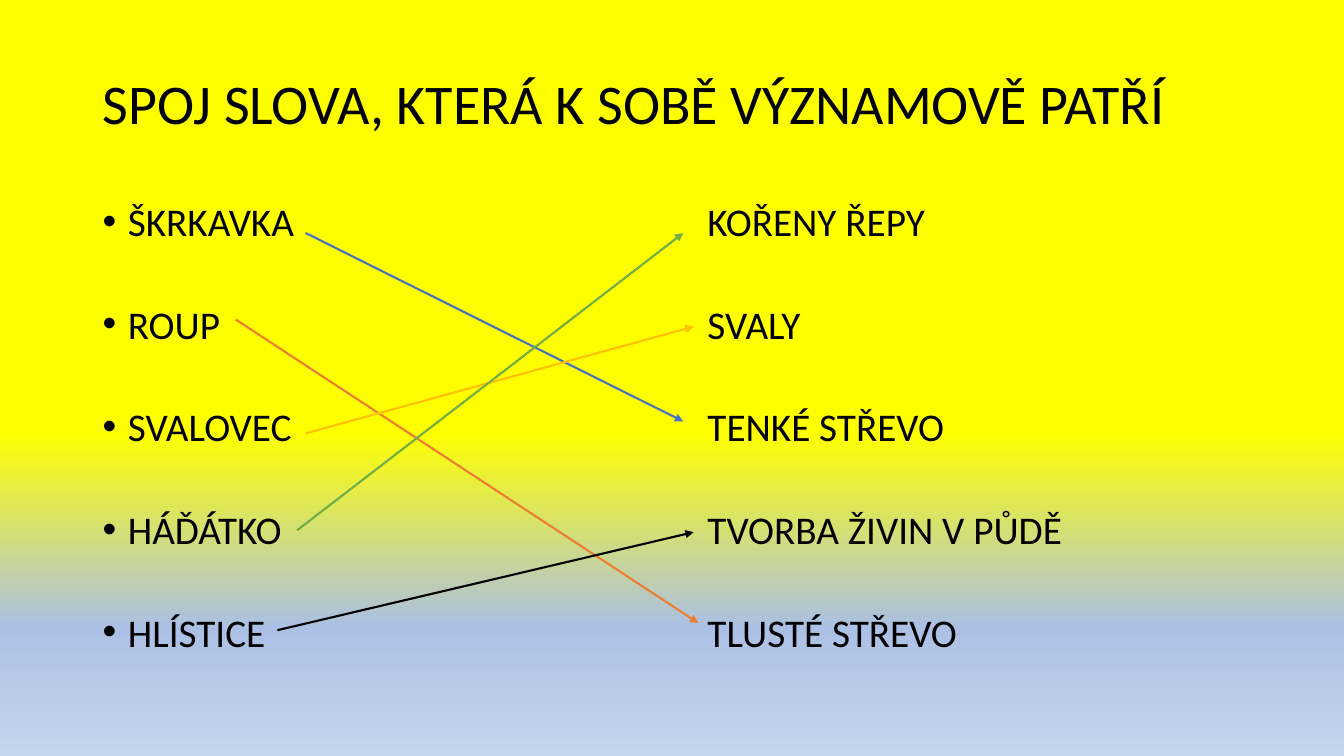
import pptx
import pptx.util
import pptx.dml.color
import pptx.enum.shapes
import pptx.enum.text
import pptx.oxml
import pptx.oxml.ns

Cm, Pt = pptx.util.Cm, pptx.util.Pt

TITLE = "SPOJ SLOVA, KTERÁ K SOBĚ VÝZNAMOVĚ PATŘÍ"
WORMS = ["ŠKRKAVKA", "ROUP", "SVALOVEC", "HÁĎÁTKO", "HLÍSTICE"]
PLACES = ["KOŘENY ŘEPY", "SVALY", "TENKÉ STŘEVO", "TVORBA ŽIVIN V PŮDĚ", "TLUSTÉ STŘEVO"]
ARROWS = [
    ((7.7, 5.87), (17.22, 10.62), "4472C4"),
    ((5.94, 8.05), (17.6, 15.7), "ED7D31"),
    ((7.7, 10.92), (17.48, 8.23), "FFC000"),
    ((7.49, 13.36), (17.22, 5.87), "70AD47"),
    ((6.99, 15.88), (17.48, 13.41), "000000"),
]
GRADIENT = [(57, "FFFF00"), (83, "ABC0E4"), (92, "BACBE9"), (100, "C7D5ED")]
LEFT, RIGHT, SPLIT = 2.34, 31.55, 17.58
BODY_TOP, BODY_HEIGHT = 5.08, 12.09
TITLE_FORMAT = {"line_spacing": 0.9}
ROW_FORMAT = {"line_spacing": 0.8, "space_before": Pt(0), "space_after": Pt(46.4)}


def rgb(value):
    return pptx.dml.color.RGBColor.from_string(value)


def element(tag, **attrs):
    el = pptx.oxml.parse_xml(f"<a:{tag} {pptx.oxml.ns.nsdecls('a')}/>")
    for name, value in attrs.items():
        el.set(name, str(value))
    return el


def add_text(s, box, lines, size, para_format, anchor, bullet=False):
    tf = s.shapes.add_textbox(*map(Cm, box)).text_frame
    tf.word_wrap = True
    tf.vertical_anchor = anchor
    for i, line in enumerate(lines):
        p = tf.paragraphs[0] if i == 0 else tf.add_paragraph()
        for name, value in para_format.items():
            setattr(p, name, value)
        if bullet:
            pPr = p._p.get_or_add_pPr()
            pPr.set("marL", str(Cm(0.635)))
            pPr.set("indent", str(-Cm(0.635)))
            pPr.append(element("buFont", typeface="Arial"))
            pPr.append(element("buChar", char="•"))
        r = p.add_run()
        r.text = line
        for name, value in {"name": "Calibri", "size": Pt(size)}.items():
            setattr(r.font, name, value)
        r.font.color.rgb = rgb("000000")


def add_arrow(s, start, end, color):
    sp = s.shapes.add_connector(
        pptx.enum.shapes.MSO_CONNECTOR.STRAIGHT, *map(Cm, start + end))
    sp.line.color.rgb = rgb(color)
    sp.line.width = Pt(1.5)
    sp.line._get_or_add_ln().append(element("tailEnd", type="triangle"))
    sp._element.spPr.append(element("effectLst"))


def set_background(s):
    fill = s.background.fill
    fill.gradient()
    fill.gradient_angle = 270
    stops = s._element.xpath(".//a:gsLst")[0]
    for stop in list(stops):
        stops.remove(stop)
    for percent, color in GRADIENT:
        stop = element("gs", pos=percent * 1000)
        stop.append(element("srgbClr", val=color))
        stops.append(stop)


def main():
    prs = pptx.Presentation()
    prs.slide_width, prs.slide_height = Cm(33.87), Cm(19.05)
    s = prs.slides.add_slide(prs.slide_layouts[6])
    set_background(s)
    anchor = pptx.enum.text.MSO_ANCHOR
    add_text(s, (LEFT, 0.84, RIGHT - LEFT, 3.68), [TITLE], 40, TITLE_FORMAT, anchor.MIDDLE)
    for left, right, words, bullet in ((LEFT, SPLIT, WORMS, True), (SPLIT, RIGHT, PLACES, False)):
        add_text(s, (left, BODY_TOP, right - left, BODY_HEIGHT), words, 28,
                 ROW_FORMAT, anchor.TOP, bullet)
    for start, end, color in ARROWS:
        add_arrow(s, start, end, color)
    prs.save("out.pptx")


if __name__ == "__main__":
    main()
